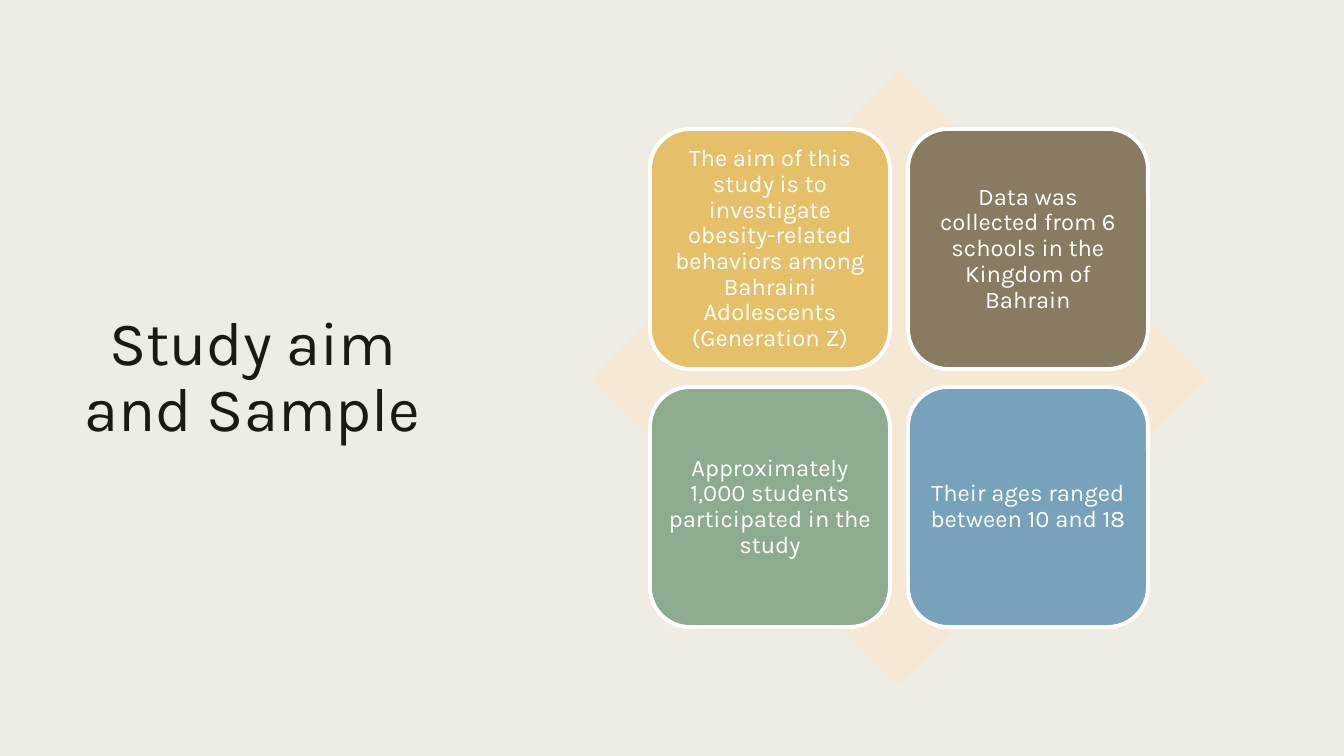
import dataclasses

import pptx
import pptx.dml.color
import pptx.enum.shapes
import pptx.enum.text
import pptx.util

SLIDE_WIDTH, SLIDE_HEIGHT = 1344, 756
EMU_PER_PX = 12192000 / SLIDE_WIDTH
SHAPES = pptx.enum.shapes.MSO_SHAPE


@dataclasses.dataclass(frozen=True)
class Theme:
    font: str = "Karla"
    background: str = "EFEDE3"
    ink: str = "191B0E"
    diamond: str = "F5E8D4"
    white: str = "FFFFFF"
    title_size: int = 44
    tile_size: int = 17
    outline: float = 2.75


THEME = Theme()

TILES = [
    ("The aim of this study is to investigate obesity-related behaviors "
     "among Bahraini Adolescents (Generation Z)", "E6C069"),
    ("Data was collected from 6 schools in the Kingdom of Bahrain", "897B61"),
    ("Approximately 1,000 students participated in the study", "8DAB8E"),
    ("Their ages ranged between 10 and 18", "77A2BB"),
]
TILE_LEFT, TILE_TOP, TILE_SIDE, TILE_PITCH = 650, 129, 240, 258


def px(length):
    return pptx.util.Emu(round(length * EMU_PER_PX))


def rgb(code):
    return pptx.dml.color.RGBColor.from_string(code)


def write(box, text, *, size, color, spacing, inset_x, inset_y):
    """Set one centred paragraph in the middle of a box."""
    frame = box.text_frame
    frame.word_wrap = True
    frame.vertical_anchor = pptx.enum.text.MSO_ANCHOR.MIDDLE
    frame.margin_left = frame.margin_right = px(inset_x)
    frame.margin_top = frame.margin_bottom = px(inset_y)
    para = frame.paragraphs[0]
    para.alignment = pptx.enum.text.PP_ALIGN.CENTER
    para.line_spacing = spacing
    span = para.add_run()
    span.text = text
    span.font.name = THEME.font
    span.font.size = pptx.util.Pt(size)
    span.font.color.rgb = rgb(color)


def add_filled_shape(page, kind, left, top, side, fill, outline=None):
    shape = page.shapes.add_shape(kind, px(left), px(top), px(side), px(side))
    shape.shadow.inherit = False
    shape.fill.solid()
    shape.fill.fore_color.rgb = rgb(fill)
    if outline:
        shape.line.color.rgb = rgb(outline)
        shape.line.width = pptx.util.Pt(THEME.outline)
    else:
        shape.line.fill.background()
    return shape


def add_title(page, text):
    box = page.shapes.add_textbox(px(71), px(71), px(364), px(615))
    write(box, text, size=THEME.title_size, color=THEME.ink,
          spacing=0.89, inset_x=10, inset_y=5)


def add_tile(page, index, text, fill):
    row, column = divmod(index, 2)
    tile = add_filled_shape(page, SHAPES.ROUNDED_RECTANGLE,
                            TILE_LEFT + column * TILE_PITCH,
                            TILE_TOP + row * TILE_PITCH,
                            TILE_SIDE, fill, THEME.white)
    write(tile, text, size=THEME.tile_size, color=THEME.white,
          spacing=0.9, inset_x=7, inset_y=7)


def main():
    deck = pptx.Presentation()
    deck.slide_width, deck.slide_height = px(SLIDE_WIDTH), px(SLIDE_HEIGHT)
    page = deck.slides.add_slide(deck.slide_layouts[6])
    page.background.fill.solid()
    page.background.fill.fore_color.rgb = rgb(THEME.background)

    add_title(page, "Study aim and Sample")
    add_filled_shape(page, SHAPES.DIAMOND, 592, 71, 615, THEME.diamond)
    for index, (text, fill) in enumerate(TILES):
        add_tile(page, index, text, fill)

    deck.save("out.pptx")


if __name__ == "__main__":
    main()
